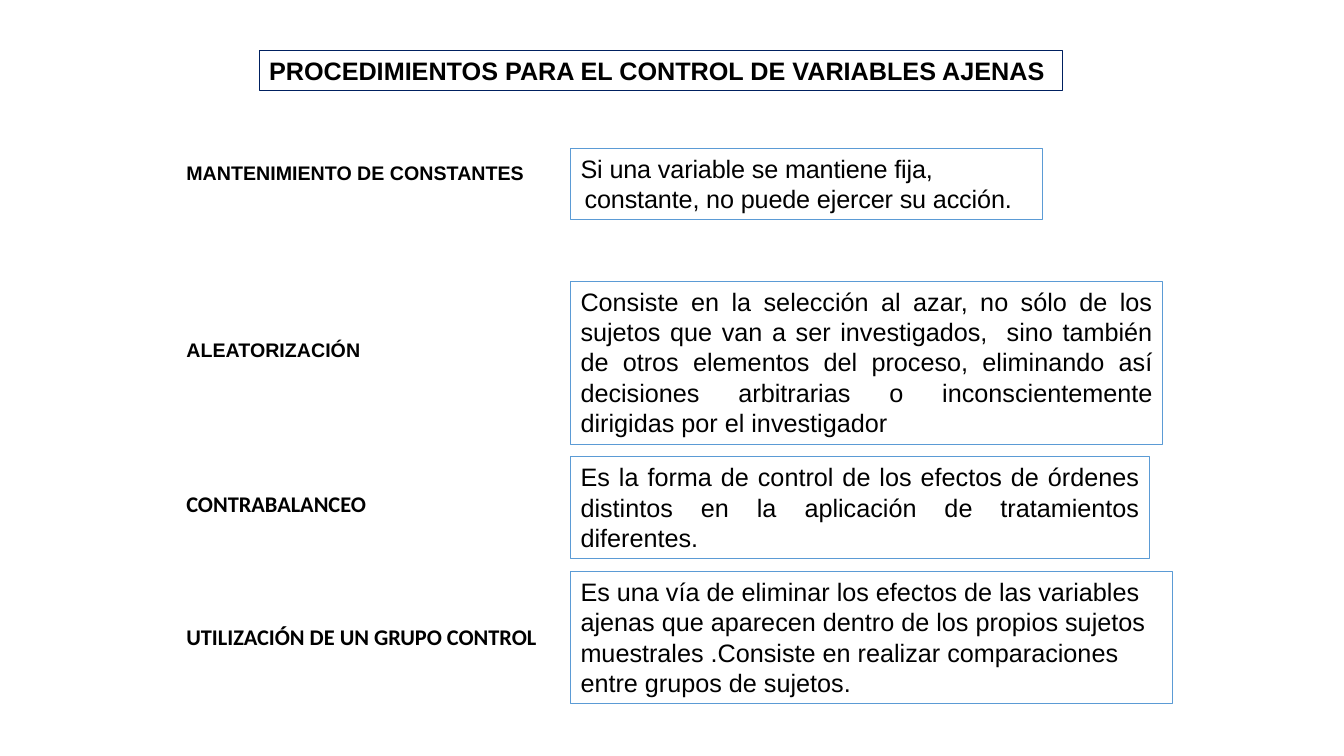
from dataclasses import dataclass

from pptx import Presentation
from pptx.dml.color import RGBColor
from pptx.enum.shapes import MSO_SHAPE
from pptx.enum.text import MSO_ANCHOR, MSO_AUTO_SIZE, PP_ALIGN
from pptx.util import Inches, Pt

RECT = MSO_SHAPE.RECTANGLE
TOP = MSO_ANCHOR.TOP
GROW = MSO_AUTO_SIZE.SHAPE_TO_FIT_TEXT
LEFT, JUSTIFY = PP_ALIGN.LEFT, PP_ALIGN.JUSTIFY


@dataclass(frozen=True)
class Theme:
    text: RGBColor = RGBColor(0x00, 0x00, 0x00)
    title_line: RGBColor = RGBColor(0x00, 0x20, 0x60)
    box_line: RGBColor = RGBColor(0x5B, 0x9B, 0xD5)
    line_width: float = 0.75
    font: str = "Arial"
    alt_font: str = "Calibri"
    body_size: int = 18
    label_size: int = 14
    alt_label_size: int = 16


THEME = Theme()
LABEL_X, BOX_X = 1.75, 5.66


@dataclass(frozen=True)
class Block:
    text: str
    x: float
    y: float
    w: float
    h: float
    font: str = THEME.font
    size: int = THEME.body_size
    bold: bool = False
    line: RGBColor | None = None
    wrap: bool = True
    align: PP_ALIGN = LEFT
    hanging: float = 0
    spacing: float = 0


def label(text: str, y: float, w: float, h: float, font: str = THEME.font,
          size: int = THEME.label_size, wrap: bool = False) -> Block:
    return Block(text, LABEL_X, y, w, h, font, size, bold=True, wrap=wrap)


def definition(text: str, y: float, w: float, h: float, align: PP_ALIGN = LEFT,
               hanging: float = 0, spacing: float = 0) -> Block:
    return Block(text, BOX_X, y, w, h, line=THEME.box_line, align=align,
                 hanging=hanging, spacing=spacing)


BLOCKS = [
    Block("PROCEDIMIENTOS PARA EL CONTROL DE VARIABLES AJENAS",
          2.57, 0.5, 7.97, 0.4, bold=True, line=THEME.title_line, wrap=False),
    label("MANTENIMIENTO DE CONSTANTES", 1.55, 3.58, 0.34),
    definition("Si una variable se mantiene fija, constante, no puede ejercer "
               "su acción.", 1.47, 4.68, 0.71, hanging=0.04, spacing=-0.1),
    label("ALEATORIZACIÓN", 3.3, 3.12, 0.61, wrap=True),
    definition("Consiste en la selección al azar, no sólo de los sujetos que van "
               "a ser investigados,  sino también de otros elementos del proceso, "
               "eliminando así decisiones arbitrarias o inconscientemente "
               "dirigidas por el investigador", 2.79, 5.87, 1.62, JUSTIFY),
    label("CONTRABALANCEO", 4.81, 2.01, 0.37,
          THEME.alt_font, THEME.alt_label_size),
    definition("Es la forma de control de los efectos de órdenes distintos en la "
               "aplicación de tratamientos diferentes. ", 4.53, 5.74, 1.01, JUSTIFY),
    label("UTILIZACIÓN DE UN GRUPO CONTROL", 6.13, 3.73, 0.37,
          THEME.alt_font, THEME.alt_label_size),
    definition("Es una vía de eliminar los efectos de las variables ajenas que "
               "aparecen dentro de los propios sujetos muestrales .Consiste en "
               "realizar comparaciones entre grupos de sujetos.", 5.67, 5.97, 1.31),
]


def draw_block(shapes, block: Block) -> None:
    """Draw a framed rectangle when the block has a line, else a text box."""
    frame = [Inches(v) for v in (block.x, block.y, block.w, block.h)]
    if block.line is None:
        s = shapes.add_textbox(*frame)
    else:
        s = shapes.add_shape(RECT, *frame)
        s.shadow.inherit = False
        s.fill.background()
        s.line.color.rgb = block.line
        s.line.width = Pt(THEME.line_width)

    tf = s.text_frame
    tf.text = block.text
    tf.word_wrap = block.wrap
    tf.auto_size = GROW
    tf.vertical_anchor = TOP

    p = tf.paragraphs[0]
    p.alignment = block.align
    if block.hanging:
        pPr = p._p.get_or_add_pPr()
        pPr.set("marL", str(Inches(block.hanging)))
        pPr.set("indent", str(-Inches(block.hanging)))

    r = p.runs[0]
    r.font.name = block.font
    r.font.size = Pt(block.size)
    r.font.bold = block.bold
    r.font.color.rgb = THEME.text
    if block.spacing:
        r._r.get_or_add_rPr().set("spc", str(round(block.spacing * 100)))


def main() -> None:
    prs = Presentation()
    prs.slide_width, prs.slide_height = Inches(13.33), Inches(7.5)
    slide = prs.slides.add_slide(prs.slide_layouts[6])
    for block in BLOCKS:
        draw_block(slide.shapes, block)
    prs.save("out.pptx")


if __name__ == "__main__":
    main()
